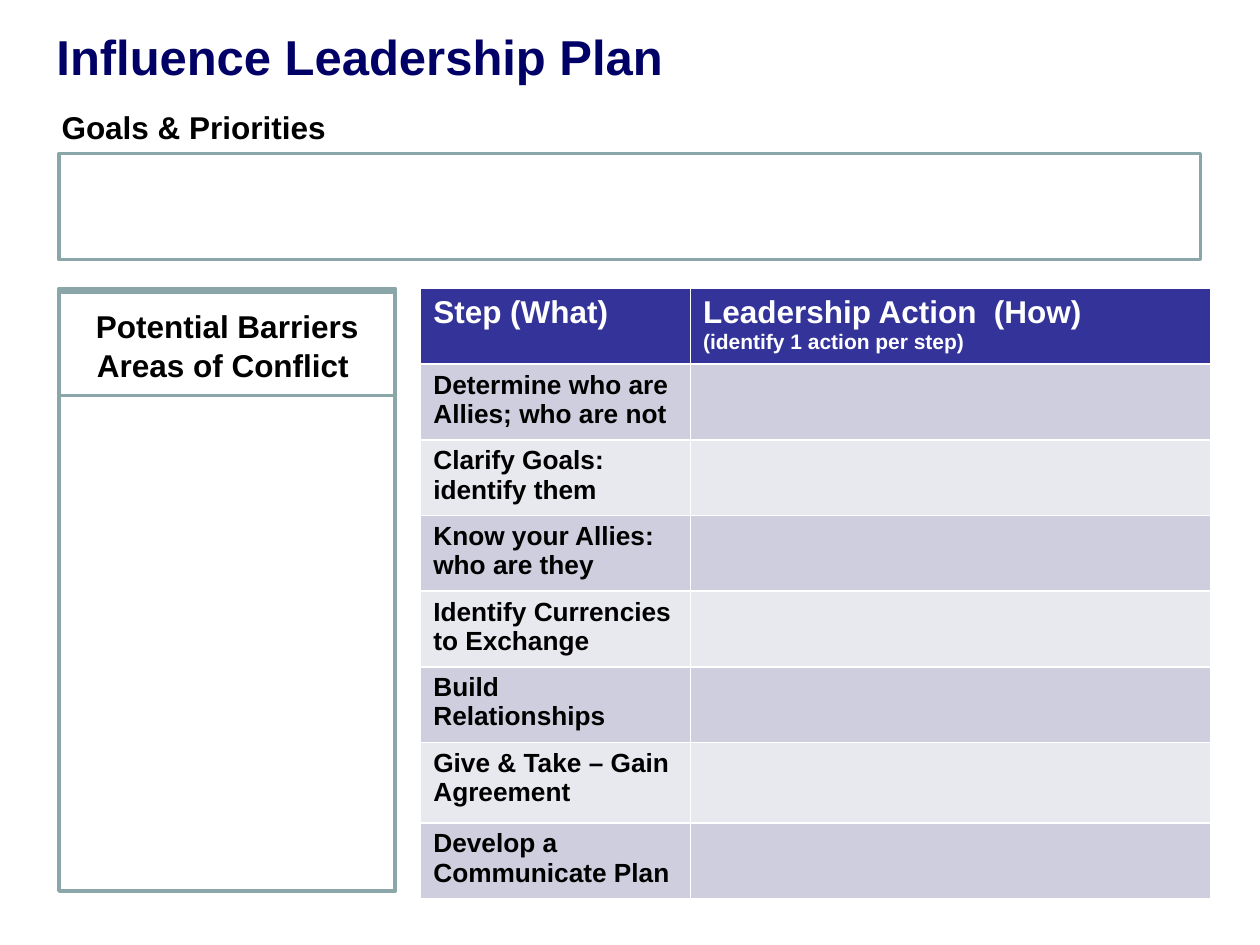
"""Build the Influence Leadership Plan slide."""
from pptx import Presentation
from pptx.dml.color import RGBColor
from pptx.enum.shapes import MSO_SHAPE
from pptx.enum.text import MSO_ANCHOR, PP_ALIGN
from pptx.util import Pt


def tint(hex):
    return RGBColor.from_string(hex)


def write(frame, *lines, size=18, color="000000", align=PP_ALIGN.LEFT, gap=None):
    for i, line in enumerate(lines):
        para = frame.paragraphs[0] if i == 0 else frame.add_paragraph()
        para.alignment = align
        para.line_spacing = gap
        run = para.add_run()
        run.text = line
        font = run.font
        font.name, font.size, font.bold = "Arial", Pt(size), True
        font.color.rgb = tint(color)


deck = Presentation()
deck.slide_width, deck.slide_height = Pt(720), Pt(540)
slide = deck.slides.add_slide(deck.slide_layouts[6])
shapes = slide.shapes

title = shapes.add_textbox(Pt(25.2), Pt(0), Pt(653), Pt(63.4)).text_frame
title.word_wrap = True
title.vertical_anchor = MSO_ANCHOR.MIDDLE
write(title, "Influence Leadership Plan", size=28, color="000066")

left, wide = 33.8, 192.2
for top, width, height, line in [
    (164.9, wide, 344.2, 2.25),
    (167, wide, 59, 2),
    (87.8, 652.3, 60.5, 2),
]:
    box = shapes.add_shape(MSO_SHAPE.RECTANGLE, Pt(left), Pt(top), Pt(width), Pt(height))
    box.shadow.inherit = False
    box.fill.background()
    box.line.color.rgb = tint("8AA6A8")
    box.line.width = Pt(line)

head = shapes.add_textbox(Pt(left), Pt(170.6), Pt(wide), Pt(51.1)).text_frame
head.word_wrap = True
write(head, "Potential Barriers", "Areas of Conflict ", align=PP_ALIGN.CENTER, gap=1.05)

goals = shapes.add_textbox(Pt(28.1), Pt(58.3), Pt(167), Pt(28.8)).text_frame
goals.word_wrap = False
write(goals, "Goals & Priorities")

steps = [
    "Determine who are Allies; who are not",
    "Clarify Goals: identify them",
    "Know your Allies: who are they",
    "Identify Currencies to Exchange",
    "Build Relationships",
    "Give & Take – Gain Agreement",
    "Develop a Communicate Plan",
]
table = shapes.add_table(len(steps) + 1, 2, Pt(240.4), Pt(164.9), Pt(451.4), Pt(347.8)).table
table.columns[0].width, table.columns[1].width = Pt(154.2), Pt(297.2)
for i, row in enumerate(table.rows):
    row.height = Pt(46 if i == 6 else 43.2)
    fill = "333399" if i == 0 else "CECEDE" if i % 2 else "E8E8EF"
    for cell in row.cells:
        cell.fill.solid()
        cell.fill.fore_color.rgb = tint(fill)

write(table.cell(0, 0).text_frame, "Step (What)", color="FFFFFF")
action = table.cell(0, 1).text_frame
write(action, "Leadership Action  (How)", "(identify 1 action per step)", color="FFFFFF")
action.paragraphs[1].runs[0].font.size = Pt(12)
for i, step in enumerate(steps, 1):
    write(table.cell(i, 0).text_frame, step, size=15)

deck.save("out.pptx")
